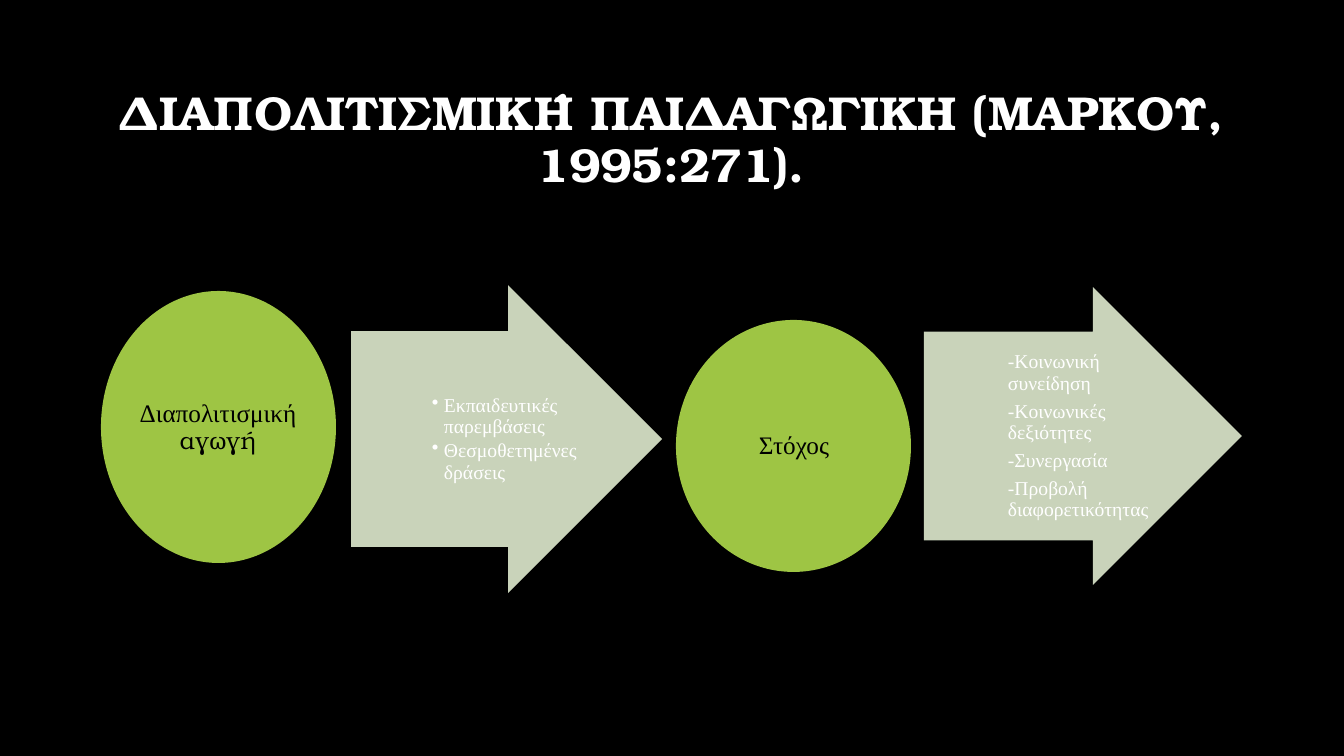
from lxml import etree
from pptx import Presentation
from pptx import util as u
from pptx.dml.color import RGBColor
from pptx.enum import shapes, text
from pptx.oxml.ns import qn

PX = 914400 / 100.8
SERIF, DISPLAY = "Times New Roman", "TeX Gyre Bonum"
WHITE, BLACK, GREEN, PALE = "FFFFFF", "000000", "9EC544", "DFEACF"
ARROW, CIRCLE = shapes.MSO_SHAPE.RIGHT_ARROW, shapes.MSO_SHAPE.OVAL
CENTER, LEFT, JUSTIFY = text.PP_ALIGN.CENTER, text.PP_ALIGN.LEFT, text.PP_ALIGN.JUSTIFY

TITLE = "ΔΙΑΠΟΛΙΤΙΣΜΙΚΉ ΠΑΙΔΑΓΩΓΙΚΗ (ΜΑΡΚΟΥ, 1995:271)."
TITLE_AREA = (101, 68, 1141, 146)
CIRCLE_FORMAT = dict(size=18, color=BLACK, align=CENTER, after=0.35, margins=(1, 1, 1, 1))
ARROW_FORMAT = dict(size=14, color=WHITE, margins=(4, 1, 2, 1))
STEPS = [
    (ARROW, (351, 285, 311, 308), (428, 332, 152, 215),
     [[("Εκπαιδευτικές παρεμβάσεις", SERIF)], [("Θεσμοθετημένες δράσεις", SERIF)]],
     dict(ARROW_FORMAT, align=LEFT, after=0.15, bullet="•")),
    (CIRCLE, (101, 291, 235, 272), (135, 331, 166, 193),
     [[("Διαπολιτισμική", SERIF), (" αγωγή", DISPLAY)]], CIRCLE_FORMAT),
    (ARROW, (924, 287, 318, 298), (1004, 332, 155, 209),
     [[("-Κοινωνική συνείδηση", SERIF)], [("-Κοινωνικές δεξιότητες", SERIF)],
      [("-Συνεργασία", SERIF)], [("-Προβολή διαφορετικότητας", SERIF)]],
     dict(ARROW_FORMAT, align=JUSTIFY, after=0.35)),
    (CIRCLE, (676, 320, 235, 252), (711, 357, 166, 178),
     [[("Στόχος", SERIF)]], CIRCLE_FORMAT),
]


def px(value):
    return u.Emu(round(value * PX))


def place(area):
    return [px(value) for value in area]


def rgb(value):
    return RGBColor.from_string(value)


def write(box, paragraphs, size, color, align, after=0, margins=None, bullet=None, bold=False):
    frame = box.text_frame
    frame.word_wrap = True
    frame.auto_size = text.MSO_AUTO_SIZE.NONE
    frame.vertical_anchor = text.MSO_ANCHOR.MIDDLE
    if margins:
        (frame.margin_left, frame.margin_top,
         frame.margin_right, frame.margin_bottom) = place(margins)
    for index, spans in enumerate(paragraphs):
        para = frame.add_paragraph() if index else frame.paragraphs[0]
        para.alignment = align
        para.line_spacing = 0.9
        para.space_after = u.Pt(size * after)
        for content, font in spans:
            span = para.add_run()
            span.text = content
            span.font.name = font
            span.font.size = u.Pt(size)
            span.font.bold = bold
            span.font.color.rgb = rgb(color)
        if bullet:
            properties = para._p.get_or_add_pPr()
            properties.set("marL", str(px(12)))
            properties.set("indent", str(px(-12)))
            etree.SubElement(properties, qn("a:buChar"), char=bullet)


def add_step(page, kind, area, text_area, paragraphs, style):
    shape = page.shapes.add_shape(kind, *place(area))
    shape.shadow.inherit = False
    shape.line.fill.background()
    shape.fill.solid()
    shape.fill.fore_color.rgb = rgb(PALE if kind == ARROW else GREEN)
    if kind == ARROW:
        shape.adjustments[0] = 0.7
        shape.adjustments[1] = 0.5
        color = shape._element.spPr.find(qn("a:solidFill"))[0]
        etree.SubElement(color, qn("a:alpha"), val="90000")
    write(page.shapes.add_textbox(*place(text_area)), paragraphs, **style)


def main():
    deck = Presentation()
    deck.slide_width, deck.slide_height = px(1344), px(756)
    page = deck.slides.add_slide(deck.slide_layouts[5])
    page.background.fill.solid()
    page.background.fill.fore_color.rgb = rgb(BLACK)
    title = page.shapes.title
    title.left, title.top, title.width, title.height = place(TITLE_AREA)
    write(title, [[(TITLE, DISPLAY)]], size=34, color=WHITE, align=CENTER, bold=True)
    for step in STEPS:
        add_step(page, *step)
    deck.save("out.pptx")


if __name__ == "__main__":
    main()
